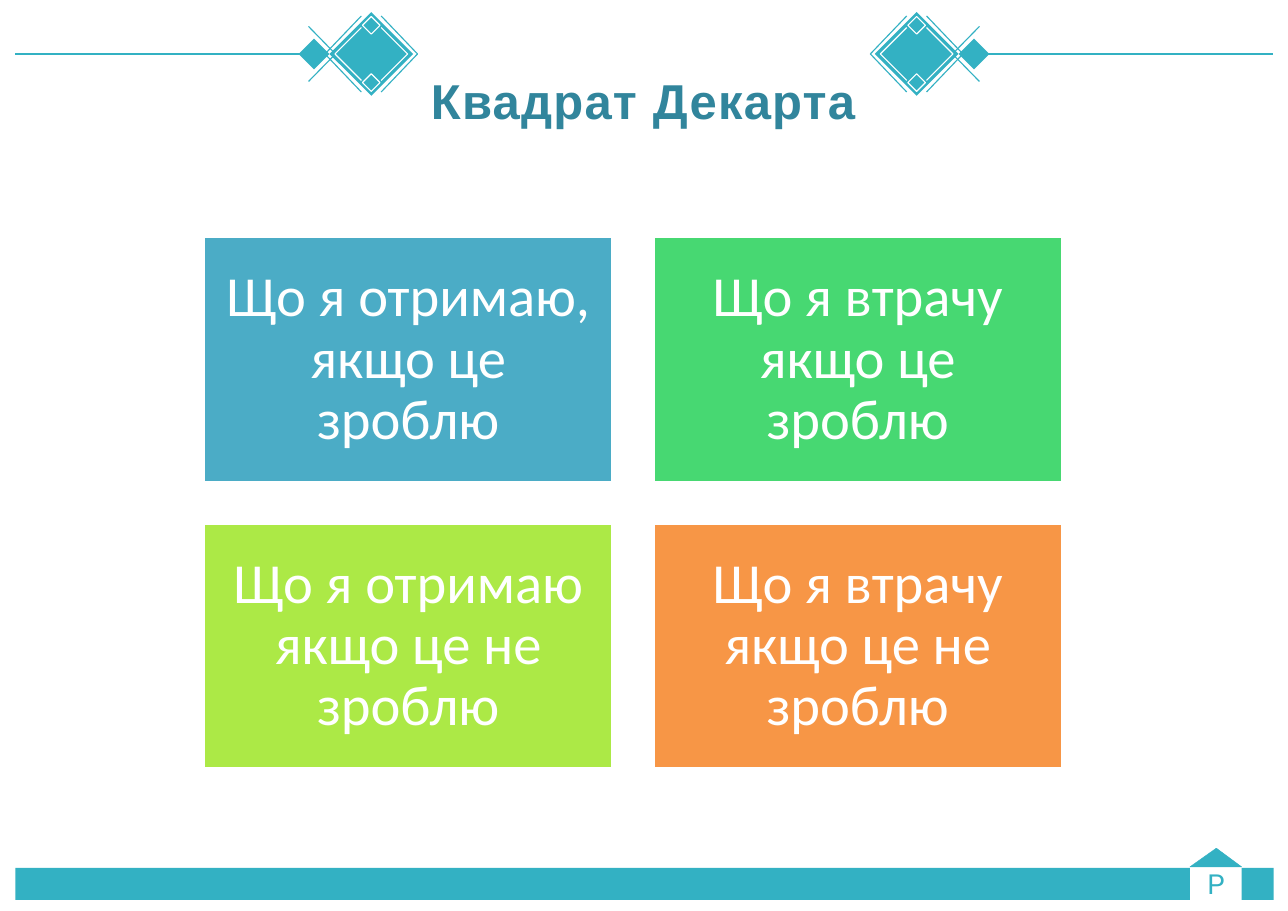
from pptx import Presentation
from pptx.dml.color import RGBColor
from pptx.enum.shapes import MSO_CONNECTOR, MSO_SHAPE
from pptx.enum.text import MSO_ANCHOR, PP_ALIGN
from pptx.oxml.ns import qn
from pptx.util import Inches, Pt

TEAL, WHITE = "33B1C3", "FFFFFF"
TITLE = "Квадрат Декарта"
CARDS = [
    ("Що я отримаю, якщо це зроблю", "4BACC6"),
    ("Що я втрачу якщо це зроблю", "47D872"),
    ("Що я отримаю якщо це не зроблю", "ACE946"),
    ("Що я втрачу якщо це не зроблю", "F79646"),
]
LEFT, TOP, WIDE, HIGH, GAP_X, GAP_Y = 1.85, 2.15, 3.71, 2.23, 0.37, 0.37
MID = 0.49
SIDES = [(3.37, 1, 0.14), (8.32, -1, 11.55)]
CHEVRONS = [(0.09, 0.42, 0.345, TEAL), (0.09, 0.33, 0.24, WHITE)]
FOOTER = [
    [(0.14, 7.88), (10.8, 7.88), (10.8, 8.17), (0.14, 8.17)],
    [(10.8, 7.87), (11.04, 7.7), (11.27, 7.87)],
    [(11.27, 7.88), (11.56, 7.88), (11.56, 8.17), (11.27, 8.17)],
]
CARD_FONT = {"name": "Calibri", "size": Pt(37)}
TITLE_FONT = {"name": "Arial", "size": Pt(32), "bold": True}
PAGE_FONT = {"name": "Roboto", "size": Pt(18)}

deck = Presentation()
deck.slide_width, deck.slide_height = Inches(11.69), Inches(8.27)
slide = deck.slides.add_slide(deck.slide_layouts[6])
shapes = slide.shapes


def tint(part, color):
    part.rgb = RGBColor.from_string(color)


def paint(shape, fill=None, line=None, width=0.75):
    shape.shadow.inherit = False
    if fill:
        shape.fill.solid()
        tint(shape.fill.fore_color, fill)
    else:
        shape.fill.background()
    if line:
        tint(shape.line.color, line)
        shape.line.width = Pt(width)
    else:
        shape.line.fill.background()


def trace(paths, closed, **look):
    first, *rest = [[(Inches(x), Inches(y)) for x, y in path] for path in paths]
    pen = shapes.build_freeform(*first[0], scale=1.0)
    pen.add_line_segments(first[1:], close=closed)
    for path in rest:
        pen.move_to(*path[0])
        pen.add_line_segments(path[1:], close=closed)
    paint(pen.convert_to_shape(), **look)


def stroke(x1, y1, x2, y2):
    line = shapes.add_connector(
        MSO_CONNECTOR.STRAIGHT, *map(Inches, (x1, y1, x2, y2)))
    tint(line.line.color, TEAL)
    line.line.width = Pt(0.75)
    props = line._element.spPr
    props.append(props.makeelement(qn("a:effectLst"), {}))


def diamond(x, y, r, **look):
    paint(shapes.add_shape(
        MSO_SHAPE.DIAMOND, *map(Inches, (x - r, y - r, 2 * r, 2 * r))), **look)


def write(shape, text, color, font, para, inset=0, anchor=MSO_ANCHOR.TOP):
    frame = shape.text_frame
    frame.word_wrap = True
    frame.vertical_anchor = anchor
    for side in ("left", "top", "right", "bottom"):
        setattr(frame, f"margin_{side}", Inches(inset))
    line = frame.paragraphs[0]
    for key, value in para.items():
        setattr(line, key, value)
    run = line.add_run()
    run.text = text
    for key, value in font.items():
        setattr(run.font, key, value)
    tint(run.font.color, color)
    return run


def label(box, *args):
    return write(shapes.add_textbox(*map(Inches, box)), *args)


trace(FOOTER, True, fill=TEAL)
trace(FOOTER[1:2], True, line=TEAL, width=0.25)

for mid, way, end in SIDES:
    diamond(mid, MID, 0.38, fill=TEAL)
    far, near = mid - way * 0.57, mid - way * 0.08
    stroke(far, 0.24, near, 0.74)
    stroke(near, 0.24, far, 0.74)
    diamond(mid - way * 0.52, MID, 0.14, fill=TEAL)
    for base, tip, rise, color in CHEVRONS:
        for sign in (-1, 1):
            trace([[(mid + sign * base, MID - rise),
                    (mid + sign * tip, MID),
                    (mid + sign * base, MID + rise)]], False, line=color)
    for y in (MID - 0.26, MID + 0.26):
        diamond(mid, y, 0.08, line=WHITE)
    stroke(mid - way * 0.63, MID, end, MID)

label((10.96, 7.88, 0.2, 0.31), "P", TEAL, PAGE_FONT, {"line_spacing": Pt(20.9)})

for i, (text, color) in enumerate(CARDS):
    row, col = divmod(i, 2)
    x, y = LEFT + col * (WIDE + GAP_X), TOP + row * (HIGH + GAP_Y)
    card = shapes.add_shape(
        MSO_SHAPE.RECTANGLE, *map(Inches, (x, y, WIDE, HIGH)))
    paint(card, color, WHITE, 2)
    write(card, text, WHITE, CARD_FONT,
          {"alignment": PP_ALIGN.CENTER, "line_spacing": 0.9},
          0.15, MSO_ANCHOR.MIDDLE)

title = label((3.79, 0.64, 4.1, 0.55), TITLE, "31859C", TITLE_FONT,
              {"alignment": PP_ALIGN.CENTER, "space_before": Pt(0.9)})
title.font._element.set("spc", "80")

deck.save("out.pptx")
